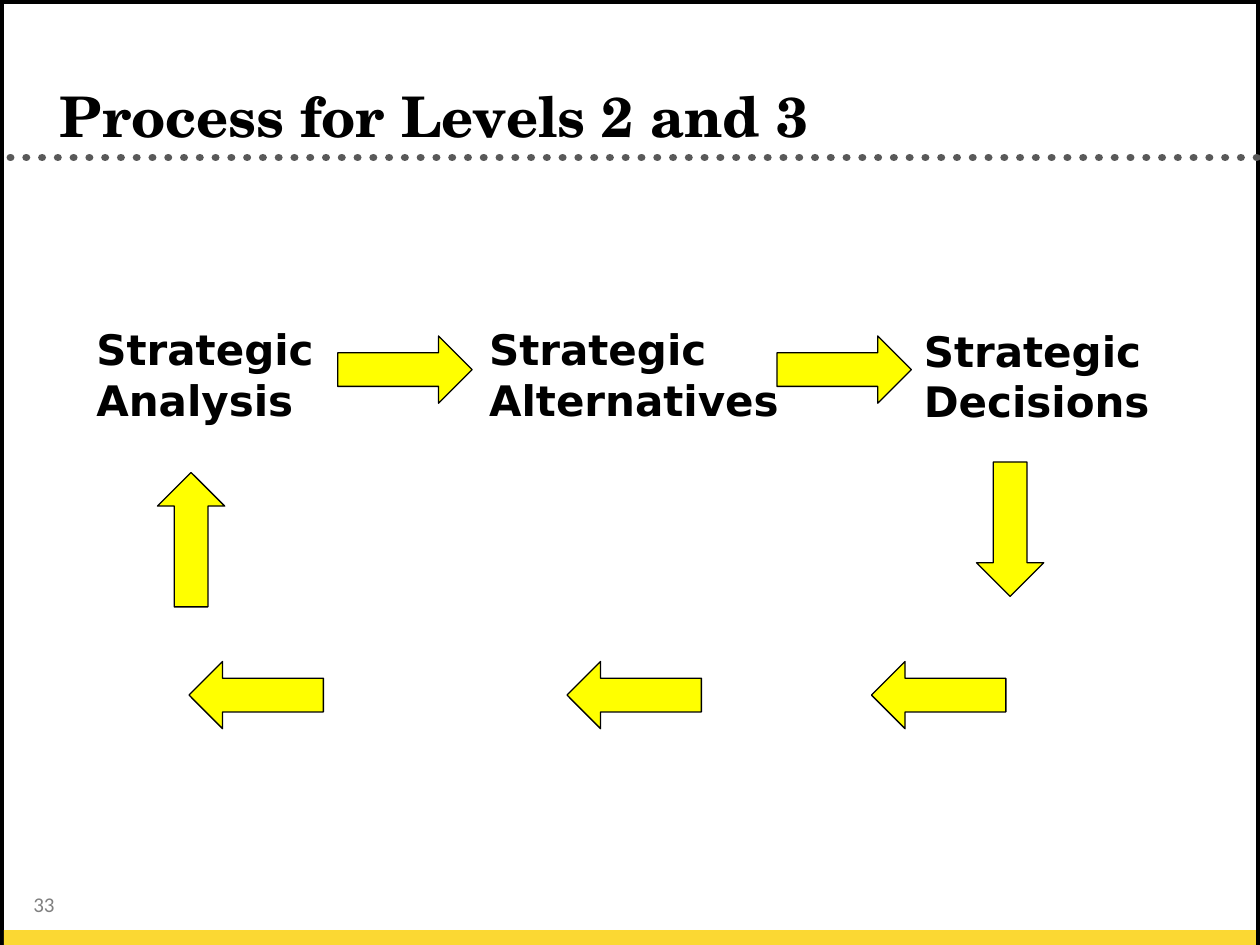
from pptx import Presentation
from pptx.dml.color import RGBColor as RGB
from pptx.enum.dml import MSO_LINE as Dash
from pptx.enum.shapes import MSO_CONNECTOR as Conn, MSO_SHAPE as Kind
from pptx.enum.text import MSO_ANCHOR as Anchor
from pptx.oxml.ns import qn
from pptx.util import Pt
from lxml.etree import SubElement as sub

LONG, SHORT = 76.8, 38.4
TITLE = {"size": Pt(32), "name": "TeX Gyre Schola", "bold": True}
LABEL = {"size": Pt(24), "name": "DejaVu Sans", "bold": True}
NUMBER = {"size": Pt(12), "name": "Calibri", "bold": False}


def tint(color, code):
    color.rgb = RGB.from_string(code)


def add_box(slide, kind, area, fill, line=None, width=0.75):
    box = slide.shapes.add_shape(kind, *map(Pt, area))
    box.shadow.inherit = False
    box.fill.solid()
    tint(box.fill.fore_color, fill)
    if line:
        tint(box.line.color, line)
        box.line.width = Pt(width)
    else:
        box.line.fill.background()
    return box


def add_text(slide, area, lines, style, code="000000", wrap=True,
             anchor=Anchor.TOP):
    frame = slide.shapes.add_textbox(*map(Pt, area)).text_frame
    frame.word_wrap = wrap
    frame.vertical_anchor = anchor
    frame.text = "\n".join(lines)
    for para in frame.paragraphs:
        for key, value in style.items():
            setattr(para.font, key, value)
        tint(para.font.color, code)


def add_dots(slide, start, end, code, width):
    rule = slide.shapes.add_connector(Conn.STRAIGHT, *map(Pt, start + end))
    tint(rule.line.color, code)
    rule.line.width = Pt(width)
    rule.line.dash_style = Dash.ROUND_DOT
    props = rule._element.spPr
    props.find(qn("a:ln")).set("cap", "rnd")
    sub(props, qn("a:effectLst"))


def add_arrow(slide, kind, left, top):
    upright = kind in (Kind.UP_ARROW, Kind.DOWN_ARROW)
    size = (SHORT, LONG) if upright else (LONG, SHORT)
    add_box(slide, kind, (left, top, *size), "FFFF00", "000000")


def main():
    deck = Presentation()
    deck.slide_width, deck.slide_height = Pt(720), Pt(540)
    slide = deck.slides.add_slide(deck.slide_layouts[6])

    # Frame, page number, dotted rule and bottom band
    add_box(slide, Kind.RECTANGLE, (0, 0, 720, 540), "FFFFFF", "000000", 4.5)
    add_text(slide, (12, 506, 66, 40), ["33"], NUMBER, "808080")
    add_dots(slide, (6, 90), (720, 90), "595959", 4.5)
    add_box(slide, Kind.RECTANGLE, (2.25, 531.5, 715.5, 8.5), "FBD833")

    # Title
    add_text(slide, (27, 21.6, 669.6, 67), ["Process for Levels 2 and 3"],
             TITLE, anchor=Anchor.BOTTOM)

    # Steps
    for word, left, top, width, wrap in (
            ("Analysis", 48, 181.5, 367, True),
            ("Alternatives", 272.4, 181.5, 180, False),
            ("Decisions", 520.8, 182.5, 144.7, False)):
        add_text(slide, (left, top, width, 65.5), ["Strategic", word],
                 LABEL, wrap=wrap)

    # Arrows, clockwise round the loop
    for kind, left, top in (
            (Kind.RIGHT_ARROW, 193, 192),
            (Kind.RIGHT_ARROW, 444, 192),
            (Kind.DOWN_ARROW, 558, 264),
            (Kind.LEFT_ARROW, 498, 378),
            (Kind.LEFT_ARROW, 324, 378),
            (Kind.LEFT_ARROW, 108, 378),
            (Kind.UP_ARROW, 90, 270)):
        add_arrow(slide, kind, left, top)

    deck.save("out.pptx")


if __name__ == "__main__":
    main()
